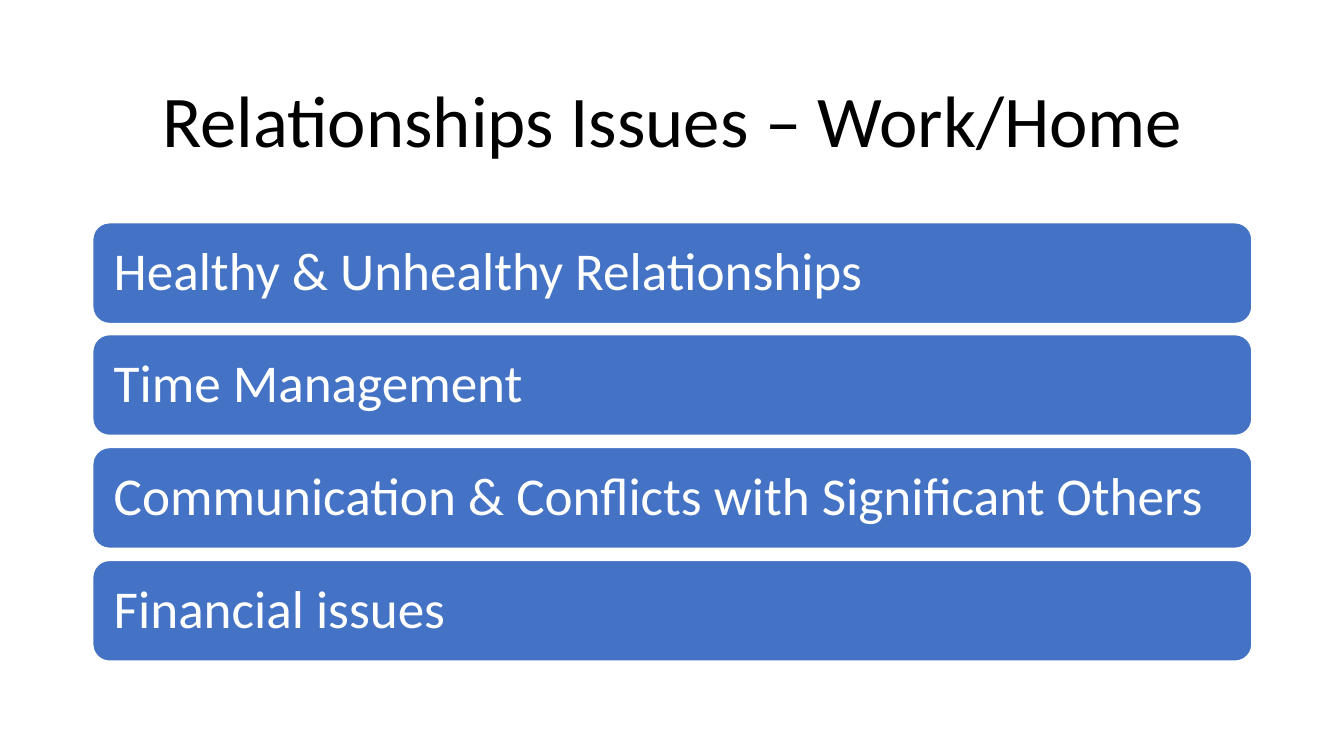
from dataclasses import dataclass

from pptx import Presentation
from pptx.dml.color import RGBColor
from pptx.enum.shapes import MSO_SHAPE
from pptx.enum.text import MSO_ANCHOR, MSO_AUTO_SIZE, PP_ALIGN
from pptx.util import Emu, Pt

ROUNDED = MSO_SHAPE.ROUNDED_RECTANGLE
MIDDLE = MSO_ANCHOR.MIDDLE
NO_FIT = MSO_AUTO_SIZE.NONE
LEFT, CENTER = PP_ALIGN.LEFT, PP_ALIGN.CENTER

EMU_PER_PX = 9144
FONT = "Calibri"
BLACK, WHITE, BLUE = "000000", "FFFFFF", "4472C4"
MARGIN, CONTENT_W = 92, 1150
FIRST_TOP, LAST_TOP, BAR_H = 221, 556, 100
BAR_INSET = 16
TOPICS = [
    "Healthy & Unhealthy Relationships",
    "Time Management",
    "Communication & Conflicts with Significant Others",
    "Financial issues",
]


@dataclass(frozen=True)
class Bar:
    text: str
    top: int


def px(n: int) -> Emu:
    return Emu(n * EMU_PER_PX)


def rgb(value: str) -> RGBColor:
    return RGBColor.from_string(value)


def write(tf, text: str, *, size: int, color: str, align=LEFT, inset: int = 10) -> None:
    tf.word_wrap = True
    tf.auto_size = NO_FIT
    tf.vertical_anchor = MIDDLE
    tf.margin_left = tf.margin_right = px(inset)
    tf.margin_top = tf.margin_bottom = px(inset)
    p = tf.paragraphs[0]
    p.alignment = align
    p.line_spacing = 0.9
    r = p.add_run()
    r.text = text
    r.font.name = FONT
    r.font.size = Pt(size)
    r.font.color.rgb = rgb(color)


def draw_title(s, text: str) -> None:
    sp = s.shapes.title
    sp.left, sp.top = px(MARGIN), px(61)
    sp.width, sp.height = px(CONTENT_W), px(124)
    write(sp.text_frame, text, size=52, color=BLACK, align=CENTER)


def draw_bar(s, bar: Bar) -> None:
    sp = s.shapes.add_shape(ROUNDED, px(MARGIN), px(bar.top), px(CONTENT_W), px(BAR_H))
    sp.shadow.inherit = False
    sp.fill.solid()
    sp.fill.fore_color.rgb = rgb(BLUE)
    sp.line.color.rgb = rgb(WHITE)
    sp.line.width = Pt(1)
    write(sp.text_frame, bar.text, size=38, color=WHITE, inset=BAR_INSET)


def main() -> None:
    prs = Presentation()
    prs.slide_width, prs.slide_height = Emu(12192000), px(750)
    s = prs.slides.add_slide(prs.slide_layouts[5])
    draw_title(s, "Relationships Issues – Work/Home")
    span = LAST_TOP - FIRST_TOP
    for i, topic in enumerate(TOPICS):
        draw_bar(s, Bar(topic, FIRST_TOP + i * span // (len(TOPICS) - 1)))
    prs.save("out.pptx")


if __name__ == "__main__":
    main()
